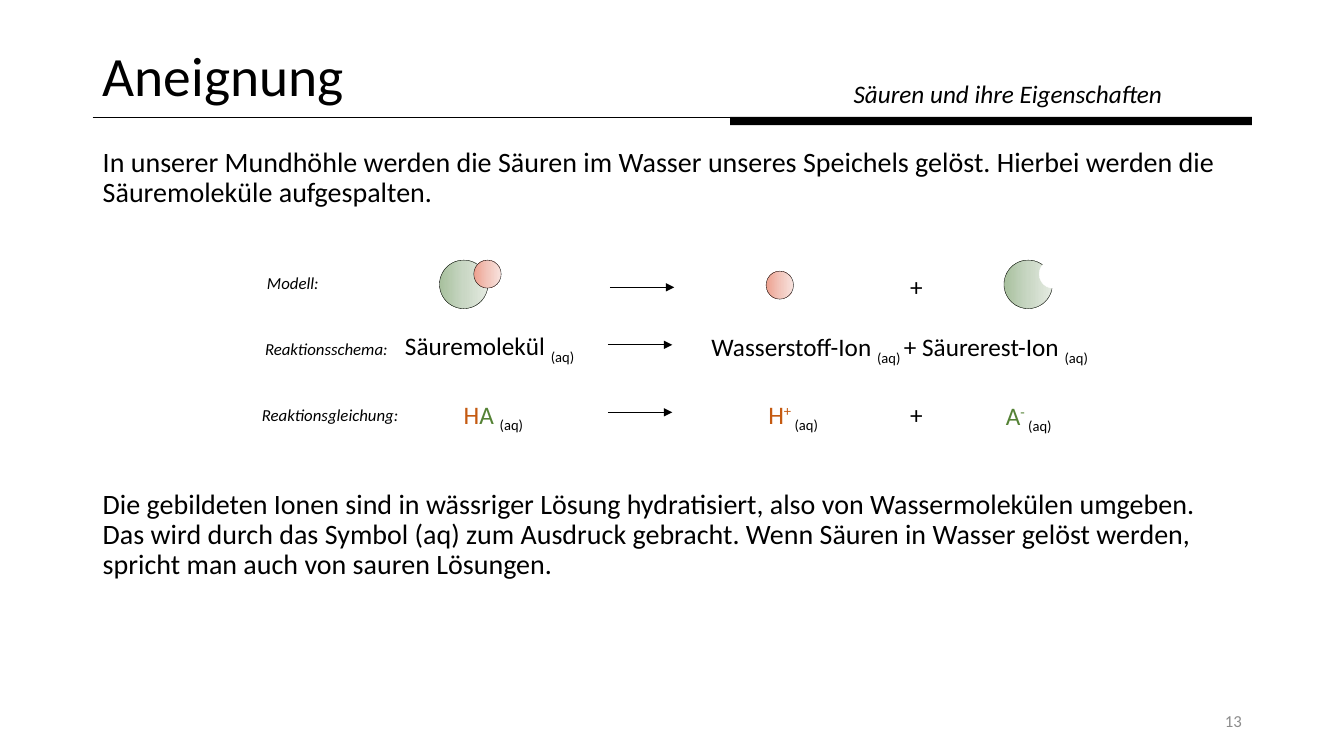
import copy
from dataclasses import dataclass

import pptx
import pptx.dml.color
import pptx.enum.shapes
import pptx.enum.text
import pptx.oxml.ns
import pptx.util

Pt = pptx.util.Pt
RGB = pptx.dml.color.RGBColor.from_string
ALIGN = pptx.enum.text.PP_ALIGN
ANCHOR = pptx.enum.text.MSO_ANCHOR
SHAPE = pptx.enum.shapes.MSO_SHAPE
qn = pptx.oxml.ns.qn


@dataclass(frozen=True)
class Theme:
    font: str = "Calibri"
    black: str = "000000"
    white: str = "FFFFFF"
    grey: str = "8C8C8C"
    hydrogen: str = "C55A11"
    rest: str = "548235"
    green_shades: tuple = ("A7C09D", "C9D7C4", "E5EBE2")
    red_shades: tuple = ("EDA08E", "F2C5BB", "F8E3DE")
    title: float = 39.6
    body: float = 20
    formula: float = 18
    small: float = 12
    hairline: float = 0.25
    rule: float = 0.5
    subscript: int = -25000
    superscript: int = 30000


THEME = Theme()
AQ = ("(aq)", THEME.black, THEME.subscript)


def place(shape, left, top, width, height):
    shape.left, shape.top = Pt(left), Pt(top)
    shape.width, shape.height = Pt(width), Pt(height)


def style(run, size, color=THEME.black, italic=False):
    run.font.name = THEME.font
    run.font.size = Pt(size)
    run.font.italic = italic
    run.font.color.rgb = RGB(color)


def add_text(slide, box, parts, size, align=ALIGN.LEFT, italic=False):
    frame = slide.shapes.add_textbox(*map(Pt, box)).text_frame
    frame.word_wrap = True
    paragraph = frame.paragraphs[0]
    paragraph.alignment = align
    for text, color, baseline in parts:
        run = paragraph.add_run()
        run.text = text
        style(run, size, color, italic)
        if baseline:
            run.font._element.set("baseline", str(baseline))
    return frame


def add_line(slide, left, top, length, arrow=False):
    line = slide.shapes.add_connector(
        pptx.enum.shapes.MSO_CONNECTOR.STRAIGHT, Pt(left), Pt(top), Pt(left + length), Pt(top))
    line.line.color.rgb = RGB(THEME.black)
    line.line.width = Pt(THEME.rule)
    if arrow:
        head = line.line._get_or_add_ln().makeelement(qn("a:tailEnd"), {"type": "triangle"})
        line.line._get_or_add_ln().append(head)
    properties = line._element.spPr
    properties.append(properties.makeelement(qn("a:effectLst"), {}))


def add_sphere(slide, left, top, width, height, shades):
    sphere = slide.shapes.add_shape(SHAPE.OVAL, Pt(left), Pt(top), Pt(width), Pt(height))
    sphere.shadow.inherit = False
    sphere.line.width = Pt(THEME.hairline)
    if not shades:
        sphere.fill.solid()
        sphere.fill.fore_color.rgb = RGB(THEME.white)
        sphere.line.color.rgb = RGB(THEME.white)
        return
    sphere.line.color.rgb = RGB(THEME.black)
    sphere.fill.gradient()
    sphere.fill.gradient_angle = 0
    stops = sphere._element.spPr.find(".//" + qn("a:gsLst"))
    stops.insert(1, copy.deepcopy(stops[0]))
    for stop, position, shade in zip(sphere.fill.gradient_stops, (0, 0.5, 1), shades):
        stop.position = position
        stop.color.rgb = RGB(shade)


def add_header(slide, left, top, width, height):
    title = slide.shapes.title
    place(title, left, top, width, height)
    frame = title.text_frame
    frame.text = "Aneignung"
    frame.auto_size = pptx.enum.text.MSO_AUTO_SIZE.NONE
    frame.vertical_anchor = ANCHOR.MIDDLE
    frame.paragraphs[0].alignment = ALIGN.LEFT
    frame.paragraphs[0].line_spacing = 0.9
    style(frame.paragraphs[0].runs[0], THEME.title)

    bottom = top + height
    add_line(slide, left, bottom, width)
    bar_width = width * 0.45
    bar = slide.shapes.add_shape(
        SHAPE.RECTANGLE, Pt(left + width - bar_width), Pt(bottom), Pt(bar_width), Pt(5.8))
    bar.shadow.inherit = False
    bar.fill.solid()
    bar.fill.fore_color.rgb = RGB(THEME.black)
    bar.line.fill.background()
    add_text(slide, (left + 536.4, top + 23.8, 315, 28.8),
             [("Säuren und ihre Eigenschaften", THEME.black, 0)], THEME.formula, italic=True)


def add_body(slide, left, top, width, height):
    body = slide.placeholders[1]
    place(body, left, top, width, height)
    frame = body.text_frame
    frame.text = (
        "In unserer Mundhöhle werden die Säuren im Wasser unseres Speichels gelöst. "
        "Hierbei werden die Säuremoleküle aufgespalten.\n"
        "Die gebildeten Ionen sind in wässriger Lösung hydratisiert, also von Wassermolekülen "
        "umgeben. Das wird durch das Symbol (aq) zum Ausdruck gebracht. Wenn Säuren in Wasser "
        "gelöst werden, spricht man auch von sauren Lösungen.")
    frame.auto_size = pptx.enum.text.MSO_AUTO_SIZE.NONE
    for paragraph, gap in zip(frame.paragraphs, (0, 201)):
        properties = paragraph._p.get_or_add_pPr()
        properties.set("marL", "0")
        properties.set("indent", "0")
        properties.append(properties.makeelement(qn("a:buNone"), {}))
        paragraph.line_spacing = 0.9
        paragraph.space_before = Pt(gap)
        style(paragraph.runs[0], THEME.body)


def add_reaction(slide, left, top):
    labels = (("Modell:", 3.6, 5.8), ("Reaktionsschema:", 2.2, 52.6),
              ("Reaktionsgleichung:", 0, 100.1))
    for label, x, y in labels:
        add_text(slide, (left + x, top + y, 116.6, 21.6),
                 [(label, THEME.black, 0)], THEME.small, italic=True)

    acid, proton = (34.6, 34.6), (19.6, 20)
    spheres = ((133.9, 0, acid, THEME.green_shades), (158.4, 0, proton, THEME.red_shades),
               (367.2, 7.9, proton, THEME.red_shades), (537.1, 0, acid, THEME.green_shades),
               (562.3, 0, proton, None))
    for x, y, size, shades in spheres:
        add_sphere(slide, left + x, top + y, *size, shades)

    for x, y in ((255.6, 19.4), (254.2, 60.5), (254.2, 108.7)):
        add_line(slide, left + x, top + y, 46, arrow=True)

    plus = [("+", THEME.black, 0)]
    formulas = (
        (463, 4.3, 24, ALIGN.LEFT, plus),
        (102.2, 46.8, 140.4, ALIGN.LEFT, [("Säuremolekül ", THEME.black, 0), AQ]),
        (321.1, 47.5, 327.6, ALIGN.LEFT, [
            ("Wasserstoff-Ion ", THEME.black, 0), ("(aq) ", THEME.black, THEME.subscript),
            ("+ Säurerest-Ion ", THEME.black, 0), AQ]),
        (102.2, 95.8, 140.4, ALIGN.CENTER,
         [("H", THEME.hydrogen, 0), ("A ", THEME.rest, 0), AQ]),
        (311, 95.8, 151.2, ALIGN.CENTER,
         [("H", THEME.hydrogen, 0), ("+ ", THEME.hydrogen, THEME.superscript), AQ]),
        (463, 95.8, 24, ALIGN.LEFT, plus),
        (484.6, 96.5, 140.4, ALIGN.CENTER,
         [("A", THEME.rest, 0), ("- ", THEME.rest, THEME.superscript), AQ]),
    )
    for x, y, width, align, parts in formulas:
        add_text(slide, (left + x, top + y, width, 28.8), parts, THEME.formula, align)


def add_page_number(slide, left, top, width, height):
    number = add_text(slide, (left, top, width, height),
                      [("13", THEME.grey, 0)], THEME.small, ALIGN.RIGHT)
    number.vertical_anchor = ANCHOR.MIDDLE


def main():
    deck = pptx.Presentation()
    deck.slide_width, deck.slide_height = Pt(960), Pt(540)
    slide = deck.slides.add_slide(deck.slide_layouts[1])
    margin, content_width = 66.2, 828
    add_header(slide, margin, 28.8, content_width, 54.7)
    add_body(slide, margin, 102.2, content_width, 383.8)
    add_reaction(slide, 180, 185.8)
    add_page_number(slide, margin + content_width - 216, 500.4, 216, 28.8)
    deck.save("out.pptx")


if __name__ == "__main__":
    main()
